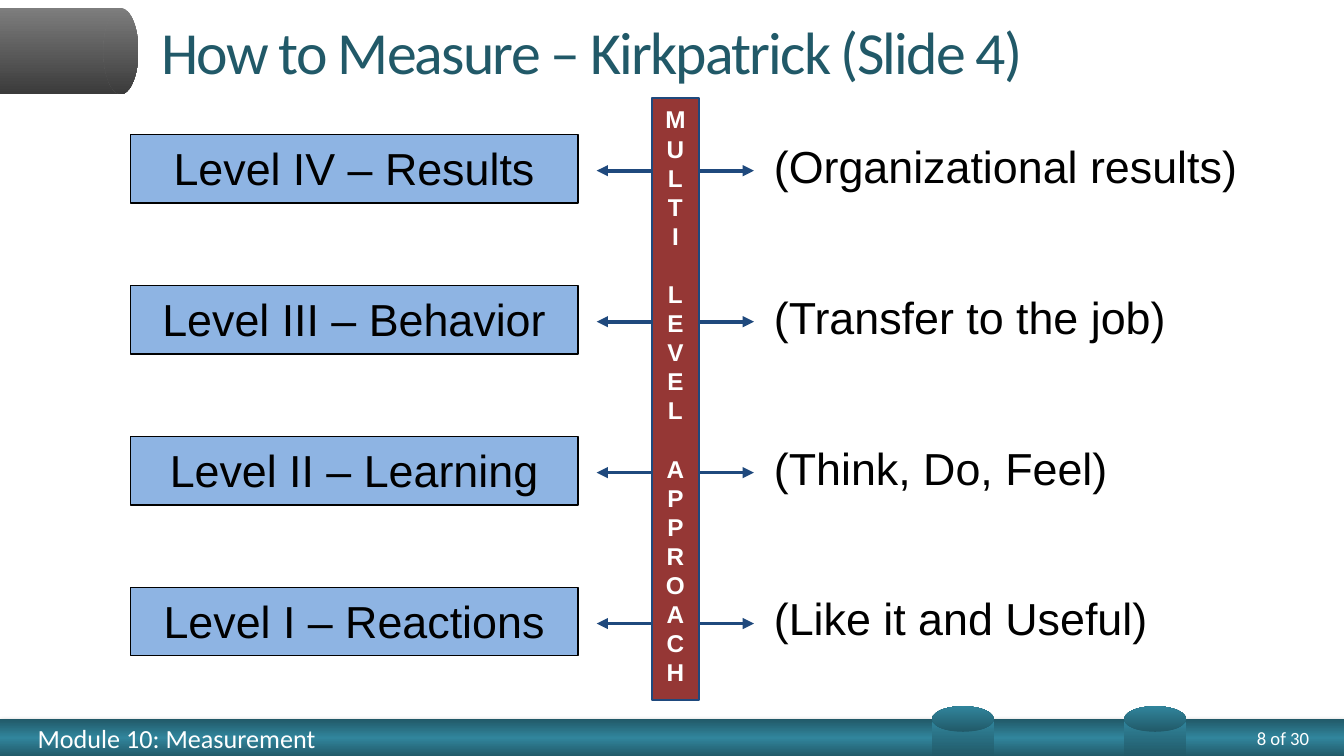
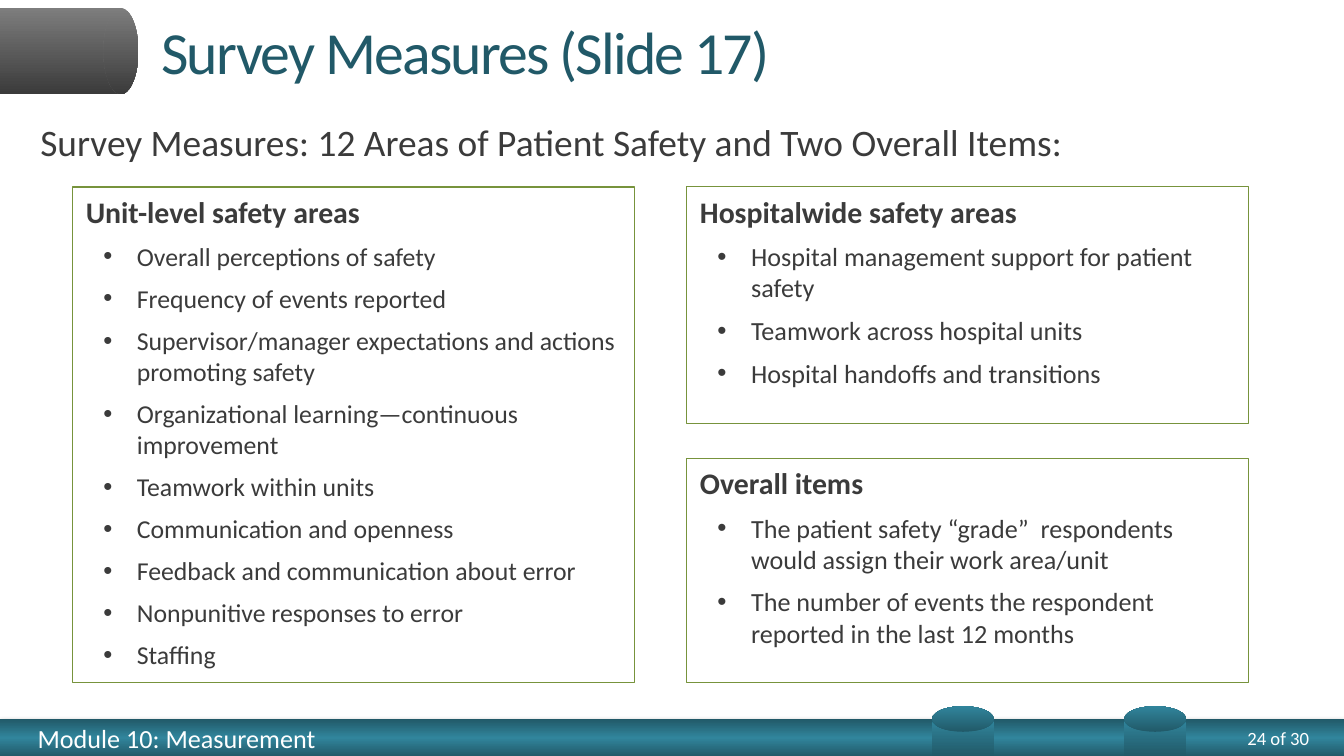
from dataclasses import dataclass

from lxml.etree import SubElement as Sub
from pptx import Presentation
from pptx.dml.color import RGBColor
from pptx.enum.shapes import MSO_CONNECTOR as Wire, MSO_SHAPE as Form
from pptx.enum.text import MSO_ANCHOR as Anchor, MSO_AUTO_SIZE as Auto, PP_ALIGN as Align
from pptx.oxml.ns import qn
from pptx.util import Inches, Pt

TEAL, AQUA = "215968", "31859C"
ASH, COAL = "7D7D7D", "3B3B3B"
WHITE, BLACK, SKY = "FFFFFF", "000000", "8EB4E3"
NAVY, BRICK, MOSS = "1F497D", "953735", "77933C"
SANS, BODY = "Arial", "Calibri"
WIDE = Inches(10)
HIGH = WIDE * 9 // 16
STEP = Inches(3.37) // 3
PITCH = 15.6


@dataclass
class Box:
    left: float
    top: float
    width: float
    height: float

    def place(self) -> tuple:
        return tuple(Inches(n) for n in (self.left, self.top, self.width, self.height))


@dataclass
class Block:
    form: Form
    box: Box
    stops: tuple
    angle: int
    turn: int = 0


@dataclass
class Level:
    name: str
    note: str
    width: float


@dataclass
class Panel:
    box: Box
    head: str
    items: list
    size: float = 14


BAND = Block(Form.RECTANGLE, Box(0, 5.35, 10, 0.28), ((0, TEAL), (50, AQUA), (100, TEAL)), 270)
GRAY, BLUE = ((0, ASH), (100, COAL)), ((0, TEAL), (100, AQUA))
BLOCKS = [
    Block(Form.RECTANGLE, Box(0, 0.06, 0.9, 0.64), GRAY, 90),
    Block(Form.OVAL, Box(0.77, 0.06, 0.26, 0.64), GRAY, 90),
]
for left in (7.03, 8.46):
    BLOCKS += [
        Block(Form.RECTANGLE, Box(left, 5.26, 0.27, 0.46), BLUE, 0, 270),
        Block(Form.OVAL, Box(left + 0.04, 5.12, 0.19, 0.46), BLUE, 0, 270),
    ]

LEVELS = [
    Level("Level IV – Results", "(Organizational results)", 3.69),
    Level("Level III – Behavior", "(Transfer to the job)", 3.15),
    Level("Level II – Learning", "(Think, Do, Feel)", 2.71),
    Level("Level I – Reactions", "(Like it and Useful)", 3.01),
]

PANELS = [
    Panel(Box(0.54, 1.39, 4.18, 3.69), "Unit-level safety areas", [
        "Overall perceptions of safety",
        "Frequency of events reported",
        "Supervisor/manager expectations and actions promoting safety",
        "Organizational learning—continuous improvement",
        "Teamwork within units",
        "Communication and openness",
        "Feedback and communication about error",
        "Nonpunitive responses to error",
        "Staffing",
    ], 13.8),
    Panel(Box(5.11, 1.39, 4.18, 1.76), "Hospitalwide safety areas", [
        "Hospital management support for patient safety",
        "Teamwork across hospital units",
        "Hospital handoffs and transitions",
    ]),
    Panel(Box(5.11, 3.41, 4.18, 1.67), "Overall items", [
        "The patient safety “grade”  respondents would assign their work area/unit",
        "The number of events the respondent reported in the last 12 months",
    ]),
]


def tint(code: str) -> RGBColor:
    return RGBColor.from_string(code)


def style(para, size: float, color: str, face: str = BODY, bold: bool = False,
          align: Align = Align.LEFT) -> None:
    para.alignment = align
    for run in para.runs:
        font = run.font
        font.name, font.size, font.bold = face, Pt(size), bold
        font.color.rgb = tint(color)


def fit(frame, wrap: bool = True, anchor: Anchor = Anchor.TOP) -> None:
    frame.auto_size = Auto.NONE
    frame.word_wrap = wrap
    frame.vertical_anchor = anchor


def move(shape, box: Box) -> None:
    shape.left, shape.top, shape.width, shape.height = box.place()


def label(slide, box: Box, text: str, size: float, color: str, face: str = BODY,
          align: Align = Align.LEFT, wrap: bool = True):
    shape = slide.shapes.add_textbox(*box.place())
    frame = shape.text_frame
    fit(frame, wrap)
    frame.text = text
    style(frame.paragraphs[0], size, color, face, align=align)
    return shape


def plain(slide, form: Form, box: Box, fill: str = "", edge: str = ""):
    shape = slide.shapes.add_shape(form, *box.place())
    shape.shadow.inherit = False
    if fill:
        shape.fill.solid()
        shape.fill.fore_color.rgb = tint(fill)
    else:
        shape.fill.background()
    if edge:
        shape.line.color.rgb = tint(edge)
        shape.line.width = Pt(0.75)
    else:
        shape.line.fill.background()
    fit(shape.text_frame)
    return shape


def shade(slide, block: Block):
    shape = plain(slide, block.form, block.box)
    shape.rotation = block.turn
    shape.fill.gradient()
    grad = shape.element.spPr.find(qn("a:gradFill"))
    for child in list(grad):
        grad.remove(child)
    grad.set("rotWithShape", "1")
    stops = Sub(grad, qn("a:gsLst"))
    for place, color in block.stops:
        stop = Sub(stops, qn("a:gs"), pos=str(place * 1000))
        Sub(stop, qn("a:srgbClr"), val=color)
    Sub(grad, qn("a:lin"), ang=str(block.angle * 60000), scaled="0")
    return shape


def glow(shape) -> None:
    glows = shape.element.spPr.find(qn("a:effectLst"))
    cast = Sub(glows, qn("a:outerShdw"), blurRad=str(Pt(3.1)), dist=str(Pt(1)),
               dir="5400000", rotWithShape="0")
    color = Sub(cast, qn("a:srgbClr"), val=BLACK)
    Sub(color, qn("a:alpha"), val="35000")


def start(deck, kind: int, title: str, page: str):
    slide = deck.slides.add_slide(deck.slide_layouts[kind])
    glow(shade(slide, BAND))
    for box, text, size, align in (
        (Box(0.28, 5.35, 5.36, 0.28), "Module 10: Measurement", 14, Align.LEFT),
        (Box(8.93, 5.35, 0.81, 0.28), page, 10, Align.RIGHT),
    ):
        frame = label(slide, box, text, size, WHITE, align=align).text_frame
        frame.margin_left = frame.margin_right = frame.margin_top = frame.margin_bottom = 0
        frame.vertical_anchor = Anchor.MIDDLE
    for block in BLOCKS:
        shade(slide, block)
    head = slide.shapes.title
    move(head, Box(1.1, 0, 8.77, 0.75))
    fit(head.text_frame, anchor=Anchor.MIDDLE)
    head.text_frame.text = title
    para = head.text_frame.paragraphs[0]
    style(para, 32, TEAL)
    for run in para.runs:
        run.font._element.set("spc", "-100")
    return slide


def arrow(slide, left: int, right: int, top: int) -> None:
    wire = slide.shapes.add_connector(Wire.STRAIGHT, left, top, right, top)
    wire.line.color.rgb = tint(NAVY)
    wire.line.width = Pt(2)
    props = wire.element.spPr
    line = props.find(qn("a:ln"))
    for end in ("a:headEnd", "a:tailEnd"):
        Sub(line, qn(end), type="triangle")
    Sub(props, qn("a:effectLst"))


def pillar(slide, box: Box, words: list) -> None:
    shape = plain(slide, Form.RECTANGLE, box, BRICK, NAVY)
    frame = shape.text_frame
    fit(frame, False)
    frame.text = "\n".join("\n".join(word) for word in words)
    for para in frame.paragraphs:
        style(para, 13, WHITE, SANS, True, Align.CENTER)
        para.line_spacing = Pt(PITCH)
    first = 0
    for word in words[:-1]:
        first += len(word)
        frame.paragraphs[first].space_before = Pt(PITCH)


def bullet(para) -> None:
    props = para._p.get_or_add_pPr()
    props.set("marL", str(Inches(0.38)))
    props.set("indent", str(Inches(-0.25)))
    Sub(props, qn("a:buFont"), typeface=SANS)
    Sub(props, qn("a:buChar"), char="•")


def panel(slide, data: Panel) -> None:
    frame = plain(slide, Form.RECTANGLE, data.box, edge=MOSS).text_frame
    frame.text = "\n".join([data.head] + data.items)
    head, *rest = frame.paragraphs
    style(head, 16, COAL, bold=True)
    for para in rest:
        bullet(para)
        style(para, data.size, COAL)
    for para in frame.paragraphs:
        para.space_after = Pt(6)


def levels(deck) -> None:
    slide = start(deck, 5, "How to Measure – Kirkpatrick (Slide 4)", "8 of 30")
    for row, level in enumerate(LEVELS):
        drop = row * STEP
        shape = plain(slide, Form.RECTANGLE, Box(0.97, 1, 3.33, 0.51), SKY, BLACK)
        shape.top += drop
        shape.text_frame.text = level.name
        style(shape.text_frame.paragraphs[0], 24, BLACK, SANS, align=Align.CENTER)
        note = label(slide, Box(5.66, 0.98, level.width, 0.5), level.note, 24, BLACK, SANS,
                     wrap=False)
        note.top += drop
        arrow(slide, Inches(4.44), Inches(5.61), Inches(1.27) + drop)
    pillar(slide, Box(4.85, 0.73, 0.35, 4.48), ["MULTI", "LEVEL", "APPROACH"])


def survey(deck) -> None:
    slide = start(deck, 1, "Survey Measures (Slide 17)", "24 of 30")
    body = slide.placeholders[1]
    move(body, Box(0.2, 0.84, 7.89, 4.4))
    frame = body.text_frame
    fit(frame)
    frame.text = "Survey Measures: 12 Areas of Patient Safety and Two Overall Items:"
    para = frame.paragraphs[0]
    props = para._p.get_or_add_pPr()
    props.set("marL", "0")
    props.set("indent", "0")
    Sub(props, qn("a:buNone"))
    style(para, 20, COAL)
    para.space_before = Pt(0)
    para.space_after = Pt(12)
    for data in PANELS:
        panel(slide, data)


def main() -> None:
    deck = Presentation()
    deck.slide_width, deck.slide_height = WIDE, HIGH
    levels(deck)
    survey(deck)
    deck.save("out.pptx")


if __name__ == "__main__":
    main()
